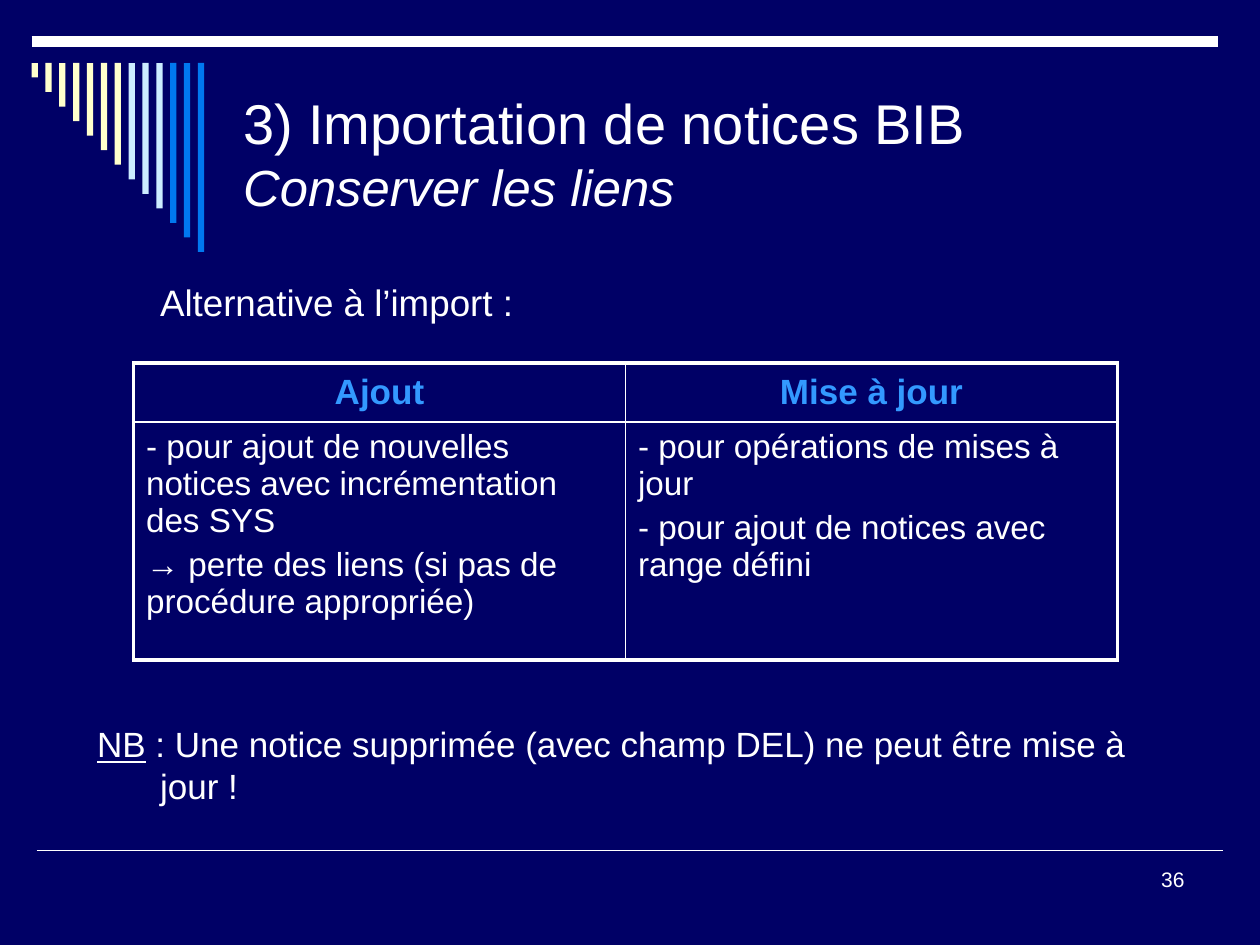
from dataclasses import dataclass

from lxml import etree
from pptx import Presentation, util as u
from pptx.dml.color import RGBColor
from pptx.enum import shapes, text
from pptx.oxml.ns import qn


@dataclass(frozen=True)
class Theme:
    font: str = "Arial"
    back: str = "000066"
    ink: str = "FFFFFF"
    head: str = "3399FF"
    cream: str = "FFFFCC"
    pale: str = "CCECFF"
    blue: str = "0078F0"
    title: float = 32
    sub: float = 29
    lead: float = 21
    body: float = 20
    cell: float = 19
    page: float = 12
    thin: float = 1
    edge: float = 2.25
    thick: float = 6


@dataclass(frozen=True)
class Rule:
    left: float
    top: float
    width: float
    weight: float


@dataclass(frozen=True)
class Column:
    head: str
    items: tuple[str, ...]


T = Theme()
RULES = (Rule(0.29, 6.75, 9.42, T.thin), Rule(0.25, 0.33, 9.42, T.thick))
BARS = [T.cream] * 7 + [T.pale] * 3 + [T.blue] * 3
COLUMNS = (
    Column("Ajout", (
        "- pour ajout de nouvelles notices avec incrémentation des SYS",
        "→ perte des liens (si pas de procédure appropriée)")),
    Column("Mise à jour", (
        "- pour opérations de mises à jour",
        "- pour ajout de notices avec range défini")),
)


def rgb(code: str) -> RGBColor:
    return RGBColor.from_string(code)


def place(shape, left: float, top: float, width: float, height: float) -> None:
    shape.left, shape.top = u.Inches(left), u.Inches(top)
    shape.width, shape.height = u.Inches(width), u.Inches(height)


def style(para, size: float, color: str = T.ink, bold: bool = False,
          align=text.PP_ALIGN.LEFT) -> None:
    font = para.font
    font.name, font.size, font.bold = T.font, u.Pt(size), bold
    font.color.rgb = rgb(color)
    para.alignment = align


def indent(para, left: float, first: float) -> None:
    """Set the indents and turn the bullet off."""
    props = para._p.get_or_add_pPr()
    props.set("marL", str(u.Inches(left)))
    props.set("indent", str(u.Inches(first)))
    etree.SubElement(props, qn("a:buNone"))


def draw_rule(slide, rule: Rule) -> None:
    y = u.Inches(rule.top)
    line = slide.shapes.add_connector(
        shapes.MSO_CONNECTOR.STRAIGHT, u.Inches(rule.left), y,
        u.Inches(rule.left + rule.width), y)
    line.line.color.rgb = rgb(T.ink)
    line.line.width = u.Pt(rule.weight)
    etree.SubElement(line._element.spPr, qn("a:effectLst"))


def draw_bars(slide) -> None:
    step = 1.5 / len(BARS)
    for i, color in enumerate(BARS):
        bar = slide.shapes.add_shape(
            shapes.MSO_SHAPE.RECTANGLE, u.Inches(0.25 + 0.11 * i),
            u.Inches(0.5), u.Inches(0.05), u.Inches(step * (i + 1)))
        bar.shadow.inherit = False
        bar.fill.solid()
        bar.fill.fore_color.rgb = rgb(color)
        bar.line.fill.background()


def border(cell, sides: dict[str, float]) -> None:
    props = cell._tc.get_or_add_tcPr()
    for i, (side, weight) in enumerate(sides.items()):
        line = etree.Element(qn(f"a:ln{side}"), w=str(u.Pt(weight)))
        fill = etree.SubElement(line, qn("a:solidFill"))
        etree.SubElement(fill, qn("a:srgbClr"), val=T.ink)
        props.insert(i, line)


def draw_table(slide, columns: tuple[Column, ...]) -> None:
    count = len(columns)
    table = slide.shapes.add_table(
        2, count, u.Inches(1.06), u.Inches(2.88),
        u.Inches(7.81), u.Inches(2.36)).table
    table.first_row = table.horz_banding = False
    table.rows[0].height, table.rows[1].height = u.Inches(0.47), u.Inches(1.89)
    for c, column in enumerate(columns):
        for r, lines in enumerate(((column.head,), column.items)):
            cell = table.cell(r, c)
            cell.fill.background()
            cell.text = "\n".join(lines)
            for para in cell.text_frame.paragraphs:
                para.space_before = u.Pt(4)
                if r == 0:
                    style(para, T.body, T.head, True, text.PP_ALIGN.CENTER)
                else:
                    style(para, T.cell)
            cell.vertical_anchor = (text.MSO_ANCHOR.TOP if r
                                    else text.MSO_ANCHOR.MIDDLE)
            outer = {"L": c == 0, "R": c == count - 1, "T": r == 0, "B": r == 1}
            border(cell, {side: T.edge if out else T.thin
                          for side, out in outer.items()})


def fill_title(shape) -> None:
    place(shape, 1.83, 0.5, 7.67, 1.42)
    frame = shape.text_frame
    frame.auto_size = text.MSO_AUTO_SIZE.NONE
    frame.vertical_anchor = text.MSO_ANCHOR.MIDDLE
    para = frame.paragraphs[0]
    style(para, T.title)
    para.add_run().text = "3) Importation de notices BIB"
    para.add_line_break()
    sub = para.add_run()
    sub.text = "Conserver les liens"
    sub.font.size, sub.font.italic = u.Pt(T.sub), True


def fill_body(shape) -> None:
    place(shape, 0.67, 2.17, 8.82, 4.5)
    frame = shape.text_frame
    frame.auto_size = text.MSO_AUTO_SIZE.NONE
    lead = frame.paragraphs[0]
    lead.text = "Alternative à l’import :"
    style(lead, T.lead)
    lead.space_before = u.Pt(2)
    indent(lead, 0.94, -0.44)
    # The note sits below the table
    note = frame.add_paragraph()
    style(note, T.body)
    note.space_before = u.Pt(228)
    indent(note, 0.5, -0.5)
    mark = note.add_run()
    mark.text, mark.font.underline = "NB", True
    note.add_run().text = (" : Une notice supprimée (avec champ DEL)"
                           " ne peut être mise à jour !")


def draw_page(slide, number: str) -> None:
    box = slide.shapes.add_textbox(
        u.Inches(7.17), u.Inches(6.83), u.Inches(2.33), u.Inches(0.5))
    box.text_frame.word_wrap = True
    para = box.text_frame.paragraphs[0]
    para.text = number
    style(para, T.page, align=text.PP_ALIGN.RIGHT)


def main() -> None:
    deck = Presentation()
    deck.slide_width, deck.slide_height = u.Inches(10), u.Inches(7.5)
    slide = deck.slides.add_slide(deck.slide_layouts[1])
    slide.background.fill.solid()
    slide.background.fill.fore_color.rgb = rgb(T.back)
    # Decoration
    for rule in RULES:
        draw_rule(slide, rule)
    draw_bars(slide)
    # Content
    fill_title(slide.shapes.title)
    fill_body(slide.placeholders[1])
    draw_table(slide, COLUMNS)
    draw_page(slide, "36")
    deck.save("out.pptx")


if __name__ == "__main__":
    main()
